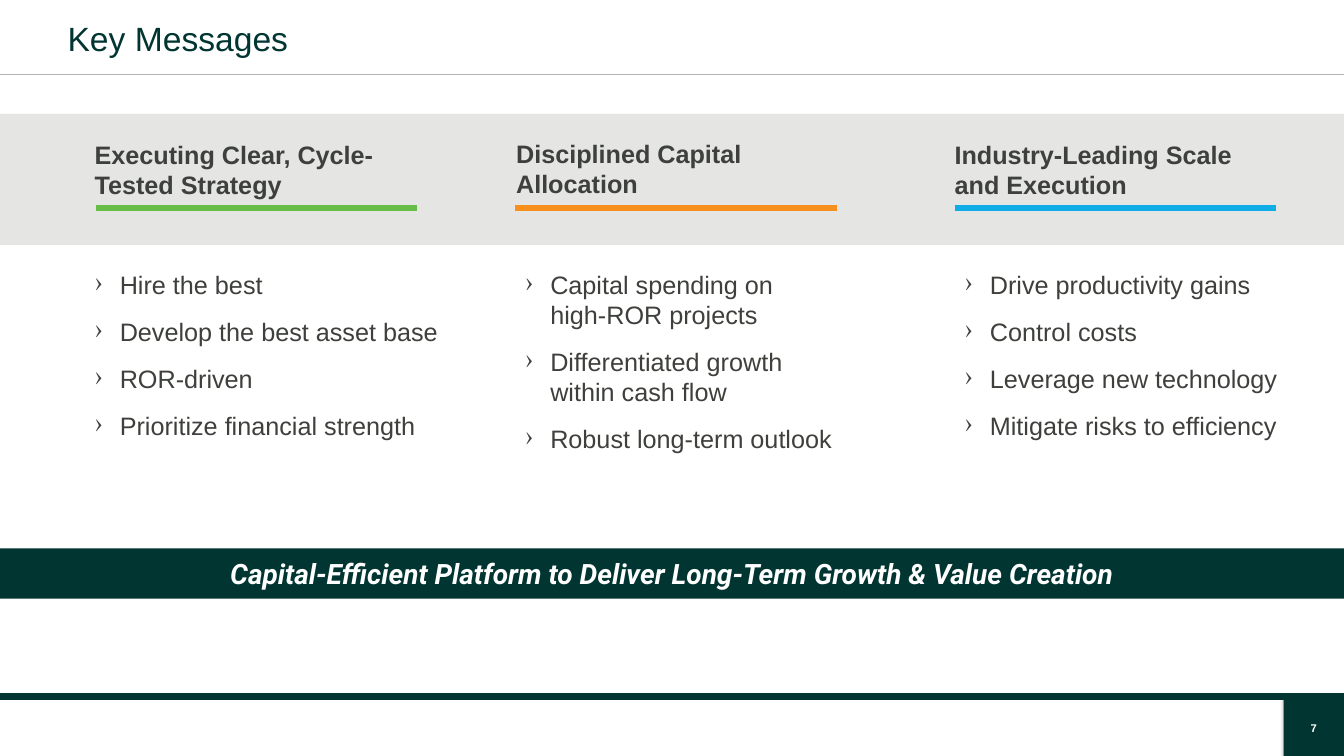
from lxml import etree
from pptx import Presentation
from pptx.dml.color import RGBColor
from pptx.enum.shapes import MSO_CONNECTOR, MSO_SHAPE
from pptx.enum.text import MSO_ANCHOR, PP_ALIGN
from pptx.oxml.ns import qn
from pptx.util import Inches, Pt

LEFT, CENTER = PP_ALIGN.LEFT, PP_ALIGN.CENTER
TOP, MIDDLE = MSO_ANCHOR.TOP, MSO_ANCHOR.MIDDLE
RECTANGLE, STRAIGHT = MSO_SHAPE.RECTANGLE, MSO_CONNECTOR.STRAIGHT
TITLE_ONLY = 5

COLORS = {
    "dark": "003531", "white": "FFFFFF", "text": "3E403C", "band": "E5E6E4",
    "hairline": "B0B3AE", "green": "68BD49", "orange": "F7901D", "blue": "0FADE6",
}

# Heading, accent, heading left and top, rule left, bullets left and width, bullets
MESSAGES = [
    ("Executing Clear, Cycle-Tested Strategy", "green", 6.3, 17.73, 7.13, 6.3, 27.3,
     ["Hire the best", "Develop the best asset base", "ROR-driven",
      "Prioritize financial strength"]),
    ("Disciplined Capital Allocation", "orange", 37.66, 17.6, 38.33, 38.33, 24.76,
     ["Capital spending on\vhigh-ROR projects",
      "Differentiated growth within cash flow", "Robust long-term outlook"]),
    ("Industry-Leading Scale and Execution", "blue", 70.29, 17.73, 71.04, 71.04, 24.76,
     ["Drive productivity gains", "Control costs", "Leverage new technology",
      "Mitigate risks to efficiency"]),
]


class SlideBuilder:
    """Draws on one slide; lengths are percentages of its width and height."""

    def __init__(self, presentation):
        self.width = presentation.slide_width
        self.height = presentation.slide_height
        self.slide = presentation.slides.add_slide(presentation.slide_layouts[TITLE_ONLY])
        self.shapes = self.slide.shapes

    def box(self, left, top, width, height):
        return [int(share * full / 100) for share, full in
                zip((left, top, width, height), (self.width, self.height) * 2)]

    def color(self, name):
        return RGBColor.from_string(COLORS[name])

    def fill_text(self, shape, texts, size, color="text", bold=False, italic=False,
                  font="Arial", align=LEFT, anchor=TOP, inset=True, bullet=None):
        frame = shape.text_frame
        frame.word_wrap = True
        frame.vertical_anchor = anchor
        if not inset:
            frame.margin_left = frame.margin_right = 0
            frame.margin_top = frame.margin_bottom = 0
        for index, text in enumerate(texts):
            paragraph = frame.add_paragraph() if index else frame.paragraphs[0]
            paragraph.text = text
            paragraph.alignment = align
            if bullet:
                paragraph.space_after = Pt(12)
                properties = paragraph._p.get_or_add_pPr()
                properties.set("marL", str(Inches(0.25)))
                properties.set("indent", str(-Inches(0.25)))
                etree.SubElement(properties, qn("a:buChar"), char=bullet)
            paragraph.font.name = font
            paragraph.font.size = Pt(size)
            paragraph.font.bold = bold
            paragraph.font.italic = italic
            paragraph.font.color.rgb = self.color(color)

    def title(self, text, *place):
        title = self.shapes.title
        title.left, title.top, title.width, title.height = self.box(*place)
        self.fill_text(title, [text], 24, "dark", anchor=MIDDLE, inset=False)

    def text(self, texts, place, size, **style):
        self.fill_text(self.shapes.add_textbox(*self.box(*place)), texts, size, **style)

    def rectangle(self, fill, *place):
        shape = self.shapes.add_shape(RECTANGLE, *self.box(*place))
        shape.fill.solid()
        shape.fill.fore_color.rgb = self.color(fill)
        shape.line.fill.background()
        shape.shadow.inherit = False
        return shape

    def soft_shadow(self, shape):
        effects = shape._element.spPr.find(qn("a:effectLst"))
        shadow = etree.SubElement(effects, qn("a:outerShdw"), blurRad=str(Pt(3.1)),
                                  dist=str(Pt(1.8)), dir="5400000", rotWithShape="0")
        black = etree.SubElement(shadow, qn("a:srgbClr"), val="000000")
        etree.SubElement(black, qn("a:alpha"), val="35000")

    def rule(self, color, left, top, width, weight):
        x, y, length, _ = self.box(left, top, width, 0)
        line = self.shapes.add_connector(STRAIGHT, x, y, x + length, y)
        line.line.color.rgb = self.color(color)
        line.line.width = Pt(weight)
        etree.SubElement(line._element.spPr, qn("a:effectLst"))


def main():
    presentation = Presentation()
    presentation.slide_width = Inches(13.33)
    presentation.slide_height = Inches(7.5)
    builder = SlideBuilder(presentation)

    # Frame: page badge, header and footer rules, heading band
    builder.soft_shadow(builder.rectangle("dark", 95.5, 92, 4.5, 8))
    builder.rule("hairline", 0, 9.87, 100, 1)
    builder.rule("dark", 0, 92.13, 100, 4.5)
    builder.rectangle("band", 0, 15.07, 100, 17.33)

    # Title and page number
    builder.title("Key Messages", 5.03, 2.4, 90, 5.33)
    builder.text(["7"], (96.02, 95.47, 3.45, 1.73), 8, color="white", bold=True,
                 align=CENTER, anchor=MIDDLE, inset=False)

    # Three message columns
    for (heading, accent, heading_left, heading_top, rule_left,
         bullets_left, bullets_width, bullets) in MESSAGES:
        builder.text([heading], (heading_left, heading_top, 24.76, 9.47), 18, bold=True)
        builder.rule(accent, rule_left, 27.47, 23.93, 4.5)
        builder.text(bullets, (bullets_left, 34.93, bullets_width, 30.5), 18, bullet="›")

    # Closing banner
    banner = builder.rectangle("dark", 0, 72.53, 100, 6.67)
    builder.fill_text(
        banner, ["Capital-Efficient Platform to Deliver Long-Term Growth & Value Creation"],
        20, "white", bold=True, italic=True, font="Roboto", align=CENTER, anchor=MIDDLE)

    presentation.save("out.pptx")


if __name__ == "__main__":
    main()
